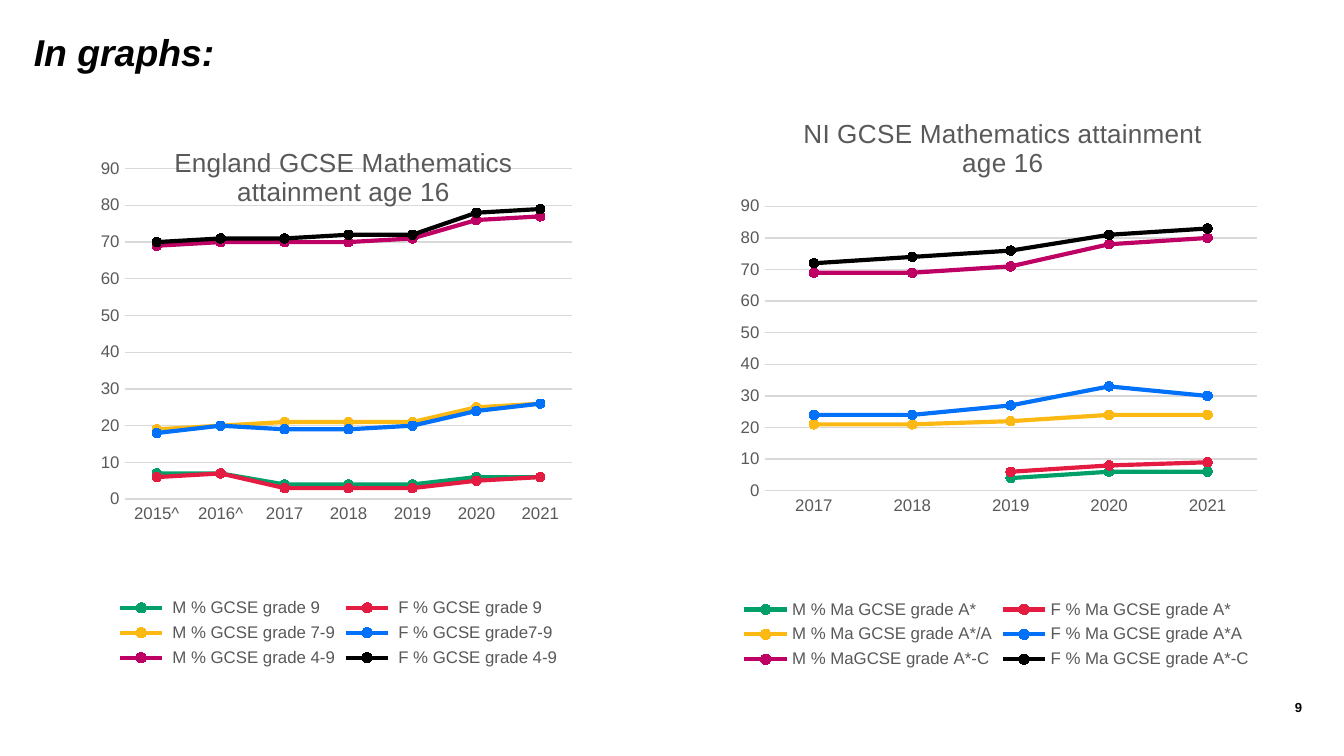
"""Build a slide comparing GCSE Mathematics attainment in England and NI with two line charts."""
from lxml import etree
from pptx import Presentation
from pptx import util as u
from pptx.chart.data import CategoryChartData
from pptx.dml.color import RGBColor
from pptx.enum import chart as kinds, text
from pptx.oxml.ns import qn

BLACK = RGBColor(0x00, 0x00, 0x00)
GREY = RGBColor(0x59, 0x59, 0x59)
RULE = RGBColor(0xD9, 0xD9, 0xD9)
GREEN = RGBColor(0x00, 0xA0, 0x68)
RED = RGBColor(0xE5, 0x1C, 0x41)
YELLOW = RGBColor(0xFD, 0xB9, 0x13)
BLUE = RGBColor(0x00, 0x71, 0xF8)
PURPLE = RGBColor(0xBE, 0x00, 0x64)
SERIES_COLORS = [GREEN, RED, YELLOW, BLUE, PURPLE, BLACK]
FONT = "Arial"

ENGLAND = {
    "title": "England GCSE Mathematics attainment age 16",
    "at": (1.7, 2.13, 9.4, 10.59),
    "title_at": (0.16, 0.05),
    "plot": (0.07, 0.1, 0.9, 0.59),
    "years": ["2015^", "2016^", "2017", "2018", "2019", "2020", "2021"],
    "series": {
        " M % GCSE grade 9": [7, 7, 4, 4, 4, 6, 6],
        " F % GCSE grade 9": [6, 7, 3, 3, 3, 5, 6],
        " M % GCSE grade 7-9": [19, 20, 21, 21, 21, 25, 26],
        " F % GCSE grade7-9": [18, 20, 19, 19, 20, 24, 26],
        " M % GCSE grade 4-9": [69, 70, 70, 70, 71, 76, 77],
        " F % GCSE grade 4-9": [70, 71, 71, 72, 72, 78, 79],
    },
}
NORTHERN_IRELAND = {
    "title": "NI GCSE Mathematics attainment age 16",
    "at": (13.49, 1.55, 10.69, 11.2),
    "title_at": (0.15, 0.05),
    "plot": (0.09, 0.21, 0.87, 0.48),
    "years": ["2017", "2018", "2019", "2020", "2021"],
    "series": {
        "M % Ma GCSE grade A*": [None, None, 4, 6, 6],
        "F % Ma GCSE grade A*": [None, None, 6, 8, 9],
        "M % Ma GCSE grade A*/A": [21, 21, 22, 24, 24],
        "F % Ma GCSE grade A*A": [24, 24, 27, 33, 30],
        "M % MaGCSE grade A*-C": [69, 69, 71, 78, 80],
        "F % Ma GCSE grade A*-C": [72, 74, 76, 81, 83],
    },
}


def style_font(font, size, color, bold=False, italic=False):
    font.name, font.size, font.bold, font.italic = FONT, u.Pt(size), bold, italic
    font.color.rgb = color


def place_part(parent, index, settings):
    for old in parent.findall(qn("c:layout")):
        parent.remove(old)
    layout = etree.Element(qn("c:layout"))
    manual = etree.SubElement(layout, qn("c:manualLayout"))
    for name, value in settings.items():
        etree.SubElement(manual, qn(f"c:{name}")).set("val", str(value))
    parent.insert(index, layout)


deck = Presentation()
deck.slide_width, deck.slide_height = u.Cm(25.4), u.Cm(14.29)
page = deck.slides.add_slide(deck.slide_layouts[5])

title = page.shapes.title
title.left, title.top, title.width, title.height = map(u.Cm, (0.64, 0.69, 23.44, 1.93))
number = page.shapes.add_textbox(*map(u.Cm, (22.1, 13.23, 2.51, 0.76)))
for box, words, size, align in [
    (title, "In graphs:", 20, text.PP_ALIGN.LEFT),
    (number, "9", 7, text.PP_ALIGN.RIGHT),
]:
    frame = box.text_frame
    frame.text = words
    frame.word_wrap = True
    frame.auto_size = text.MSO_AUTO_SIZE.NONE
    frame.vertical_anchor = text.MSO_ANCHOR.TOP
    frame.margin_left = frame.margin_right = frame.margin_top = frame.margin_bottom = 0
    para = frame.paragraphs[0]
    para.alignment = align
    style_font(para.runs[0].font, size, BLACK, bold=True, italic=box is title)
title.text_frame.paragraphs[0].line_spacing = u.Pt(20)
number.text_frame.paragraphs[0].space_after = u.Pt(6)

for region in (ENGLAND, NORTHERN_IRELAND):
    data = CategoryChartData()
    data.categories = region["years"]
    for name, values in region["series"].items():
        data.add_series(name, values)
    chart = page.shapes.add_chart(
        kinds.XL_CHART_TYPE.LINE_MARKERS, *map(u.Cm, region["at"]), data
    ).chart
    style_font(chart.font, 10, BLACK)

    chart.has_title = True
    heading = chart.chart_title
    heading.include_in_layout = False
    heading.text_frame.text = region["title"]
    style_font(heading.text_frame.paragraphs[0].runs[0].font, 14, GREY)
    left, top = region["title_at"]
    place_part(heading._element, 1, {"xMode": "edge", "yMode": "edge", "x": left, "y": top})

    left, top, width, height = region["plot"]
    place_part(chart._chartSpace.chart.plotArea, 0, {
        "layoutTarget": "inner", "xMode": "edge", "yMode": "edge",
        "x": left, "y": top, "w": width, "h": height,
    })

    chart.has_legend = True
    chart.legend.position = kinds.XL_LEGEND_POSITION.BOTTOM
    chart.legend.include_in_layout = False
    style_font(chart.legend.font, 9, GREY)

    for axis in (chart.category_axis, chart.value_axis):
        axis.major_tick_mark = axis.minor_tick_mark = kinds.XL_TICK_MARK.NONE
        style_font(axis.tick_labels.font, 9, GREY)
    value_axis = chart.value_axis
    value_axis.minimum_scale, value_axis.maximum_scale, value_axis.major_unit = 0, 90, 10
    value_axis.has_major_gridlines = True
    value_axis.format.line.fill.background()
    for line in (chart.category_axis.format.line, value_axis.major_gridlines.format.line):
        line.color.rgb, line.width = RULE, u.Pt(0.75)

    chart.plots[0].vary_by_categories = False
    for series, color in zip(chart.plots[0].series, SERIES_COLORS):
        series.smooth = False
        series.format.line.color.rgb, series.format.line.width = color, u.Pt(2.25)
        marker = series.marker
        marker.style, marker.size = kinds.XL_MARKER_STYLE.CIRCLE, 5
        marker.format.fill.solid()
        marker.format.fill.fore_color.rgb = color
        marker.format.line.color.rgb = color

deck.save("out.pptx")
